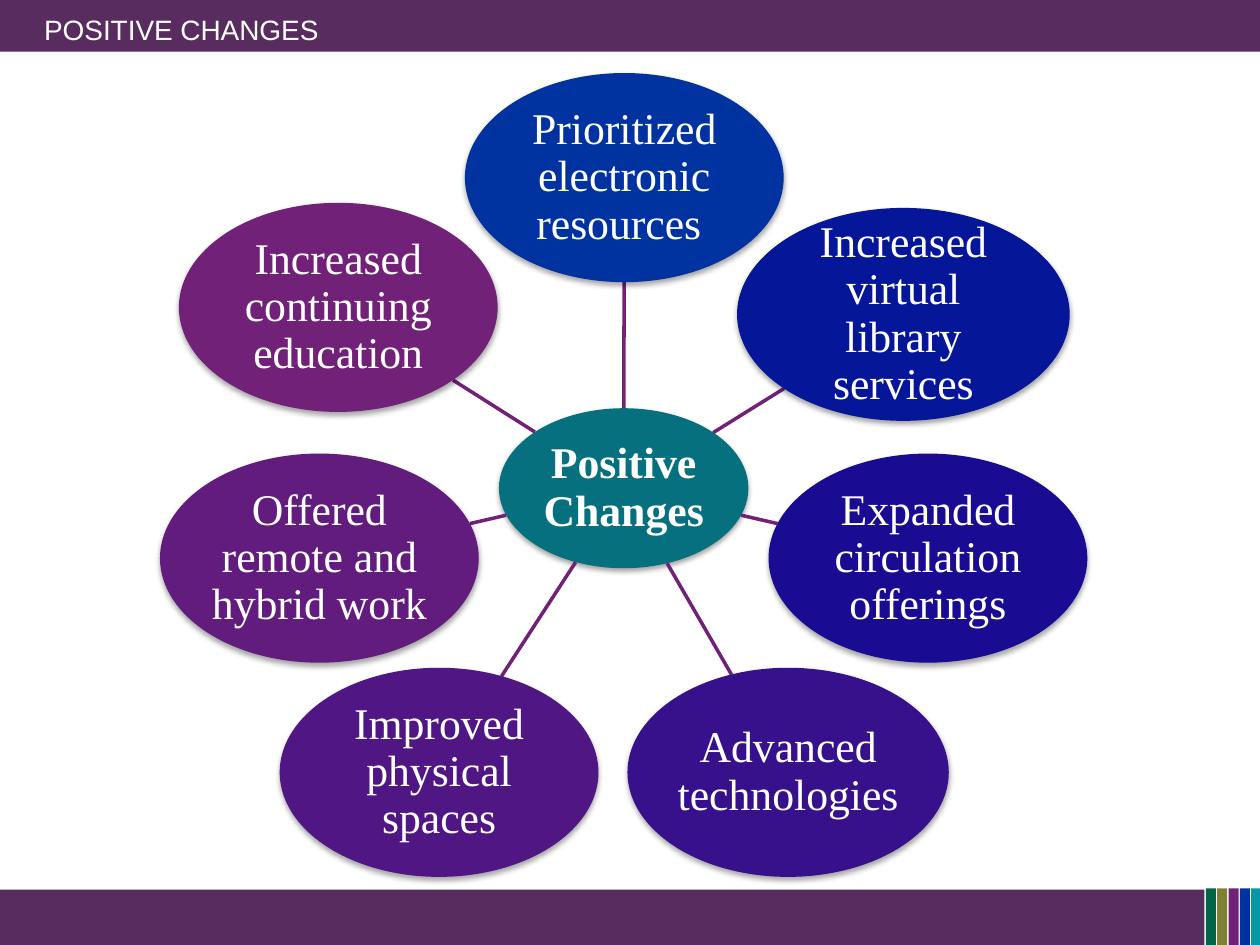
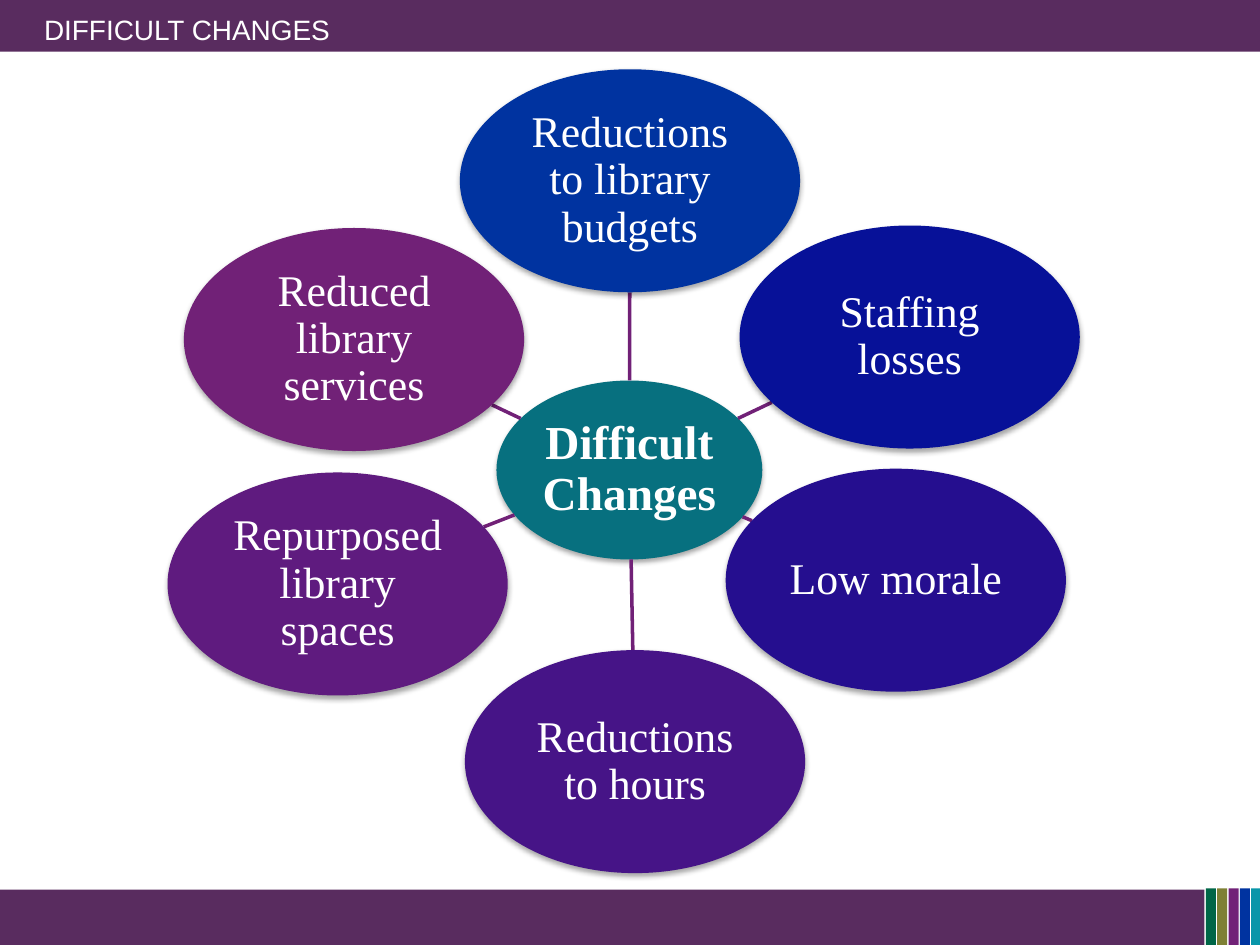
from dataclasses import dataclass
from math import hypot

from lxml import etree
from pptx import Presentation
from pptx.dml.color import RGBColor
from pptx.enum.shapes import MSO_CONNECTOR as CONN, MSO_SHAPE as SHAPE
from pptx.enum.text import MSO_ANCHOR as ANCHOR, MSO_AUTO_SIZE as AUTO, PP_ALIGN as ALIGN
from pptx.oxml.ns import qn
from pptx.util import Inches, Pt

WHITE = RGBColor(0xFF, 0xFF, 0xFF)
PLUM = RGBColor(0x59, 0x2C, 0x5F)
PURPLE = RGBColor(0x71, 0x21, 0x77)
BLUE = RGBColor(0x00, 0x33, 0xA0)
HUB_TEAL = RGBColor(0x07, 0x70, 0x7F)
TEAL = RGBColor(0x09, 0x96, 0xA9)
OLIVE = RGBColor(0x7E, 0x80, 0x34)
GREEN = RGBColor(0x00, 0x66, 0x47)
ROYAL = RGBColor(0x06, 0x16, 0x99)
NAVY = RGBColor(0x07, 0x11, 0x98)
INDIGO = RGBColor(0x19, 0x0B, 0x92)
DEEP_INDIGO = RGBColor(0x25, 0x0E, 0x8F)
VIOLET = RGBColor(0x36, 0x11, 0x8B)
DEEP_VIOLET = RGBColor(0x46, 0x14, 0x87)
GRAPE = RGBColor(0x4F, 0x16, 0x84)
MULBERRY = RGBColor(0x5F, 0x1B, 0x7F)
ORCHID = RGBColor(0x62, 0x1C, 0x7E)

STRIPES = [GREEN, OLIVE, PURPLE, BLUE, TEAL]


@dataclass
class Bubble:
    text: str
    left: float
    top: float
    fill: RGBColor
    width: float = 2.53
    height: float = 1.66
    size: int = 25
    bold: bool = False

    @property
    def center(self):
        return self.left + self.width / 2, self.top + self.height / 2

    def edge_toward(self, other):
        (x, y), (ox, oy) = self.center, other.center
        dx, dy = ox - x, oy - y
        t = 1 / hypot(dx / (self.width / 2), dy / (self.height / 2))
        return x + t * dx, y + t * dy


class Deck:
    title_font = "Arial"
    body_font = "Times New Roman"

    def __init__(self):
        self.prs = Presentation()
        self.prs.slide_width, self.prs.slide_height = Inches(10), Inches(7.5)
        self.layout = self.prs.slide_layouts[5]
        self.s = None

    def slide(self, title):
        first = self.s is None
        self.s = self.prs.slides.add_slide(self.layout)
        if first:
            self.bands()
        sp = self.s.shapes.title
        sp.left, sp.top, sp.width, sp.height = map(Inches, (0.25, -0.1, 9, 0.66))
        self.label(sp, title, self.title_font, 16, ALIGN.LEFT)

    def bands(self):
        rects = [
            self.shape(SHAPE.RECTANGLE, 0, 7.06, 9.56, 0.45, PLUM),
            self.shape(SHAPE.RECTANGLE, 0, -0.01, 10, 0.42, PLUM),
        ]
        for i, color in enumerate(STRIPES):
            rects.append(self.shape(SHAPE.RECTANGLE, 9.57 + 0.09 * i, 7.05, 0.08, 0.45, color))
        for sp in rects:
            self.layout.shapes.element.append(sp.element)

    def shape(self, kind, left, top, width, height, fill):
        sp = self.s.shapes.add_shape(kind, *map(Inches, (left, top, width, height)))
        sp.fill.solid()
        sp.fill.fore_color.rgb = fill
        sp.line.fill.background()
        sp.shadow.inherit = False
        return sp

    def label(self, sp, text, font, size, align, bold=False):
        tf = sp.text_frame
        tf.text = text
        tf.word_wrap = True
        tf.auto_size = AUTO.NONE
        tf.vertical_anchor = ANCHOR.MIDDLE
        p = tf.paragraphs[0]
        p.alignment = align
        r = p.runs[0]
        r.font.name, r.font.size, r.font.bold = font, Pt(size), bold
        r.font.color.rgb = WHITE
        return tf

    def bubble(self, b):
        sp = self.shape(SHAPE.OVAL, b.left, b.top, b.width, b.height, b.fill)
        self.drop_shadow(sp)
        tf = self.label(sp, b.text, self.body_font, b.size, ALIGN.CENTER, b.bold)
        tf.margin_left = tf.margin_right = tf.margin_top = tf.margin_bottom = Inches(0.02)
        tf.paragraphs[0].line_spacing = 0.9

    def drop_shadow(self, sp):
        effects = sp.element.spPr.find(qn("a:effectLst"))
        shadow = etree.SubElement(effects, qn("a:outerShdw"), blurRad=str(Pt(3.1)),
                                  dist=str(Pt(1.8)), dir="5400000", rotWithShape="0")
        color = etree.SubElement(shadow, qn("a:srgbClr"), val="000000")
        etree.SubElement(color, qn("a:alpha"), val="35000")

    def spoke(self, hub, b):
        ends = hub.edge_toward(b) + b.edge_toward(hub)
        line = self.s.shapes.add_connector(CONN.STRAIGHT, *map(Inches, ends))
        line.line.color.rgb = PURPLE
        line.line.width = Pt(2)
        etree.SubElement(line.element.spPr, qn("a:effectLst"))

    def wheel(self, title, hub, bubbles):
        self.slide(title)
        self.bubble(hub)
        for b in bubbles:
            self.spoke(hub, b)
            self.bubble(b)


def main():
    deck = Deck()
    deck.wheel(
        "POSITIVE CHANGES",
        Bubble("Positive Changes", 3.96, 3.24, HUB_TEAL, 1.98, 1.27, bold=True),
        [
            Bubble("Prioritized electronic resources ", 3.69, 0.58, BLUE),
            Bubble("Increased virtual library services", 5.85, 1.65, ROYAL, 2.64, 1.69),
            Bubble("Expanded circulation offerings", 6.1, 3.6, INDIGO),
            Bubble("Advanced technologies", 4.98, 5.3, VIOLET, 2.55),
            Bubble("Improved physical spaces", 2.22, 5.3, GRAPE),
            Bubble("Offered remote and hybrid work", 1.27, 3.6, ORCHID),
            Bubble("Increased continuing education", 1.42, 1.61, PURPLE),
        ],
    )
    difficulties = [
        ("Reductions to library budgets", 3.65, 0.55, BLUE),
        ("Staffing losses", 5.87, 1.79, NAVY),
        ("Low morale", 5.76, 3.72, DEEP_INDIGO),
        ("Reductions to hours", 3.69, 5.16, DEEP_VIOLET),
        ("Repurposed library spaces", 1.33, 3.75, MULBERRY),
        ("Reduced library services", 1.46, 1.81, PURPLE),
    ]
    deck.wheel(
        "DIFFICULT CHANGES",
        Bubble("Difficult Changes", 3.94, 3.02, HUB_TEAL, 2.11, 1.42, 27, True),
        [Bubble(*d, width=2.7, height=1.77) for d in difficulties],
    )
    deck.prs.save("out.pptx")


if __name__ == "__main__":
    main()
